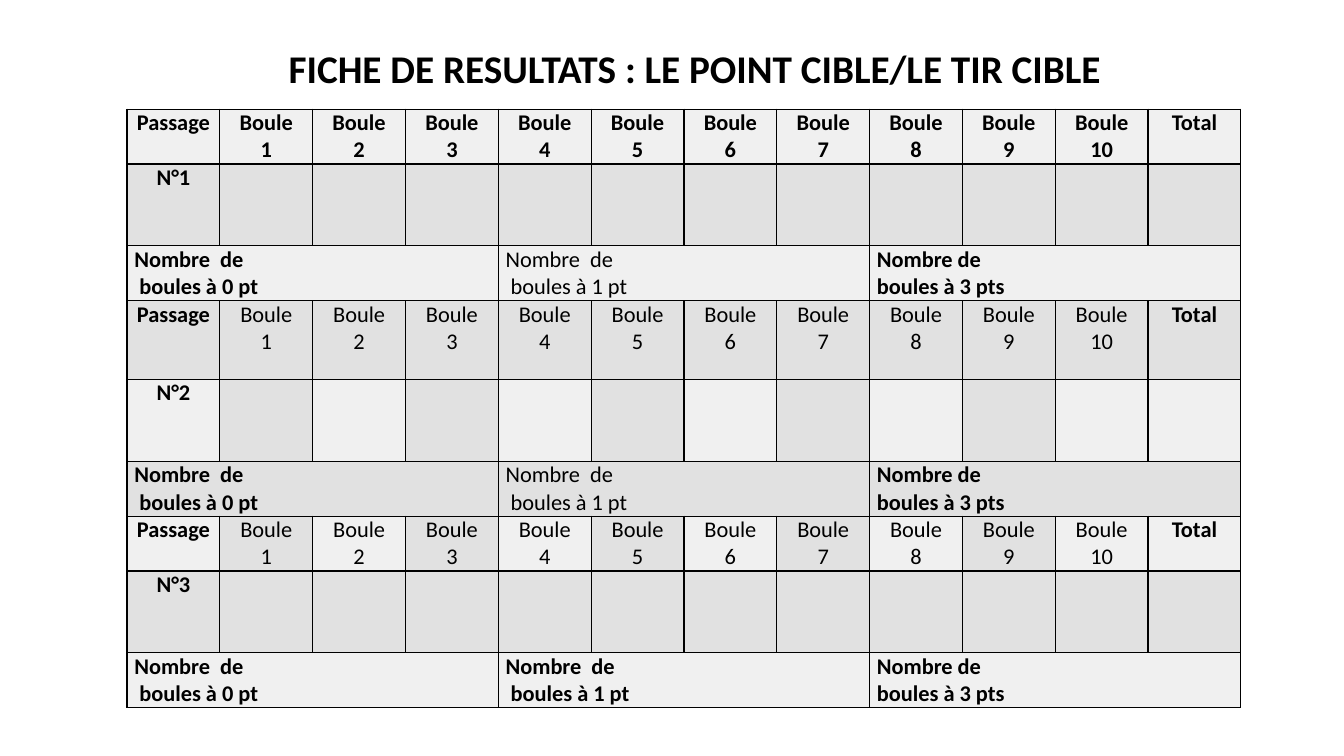
from dataclasses import dataclass

from lxml import etree
from pptx import Presentation
from pptx import util as u
from pptx.dml.color import RGBColor
from pptx.enum import text
from pptx.oxml.ns import qn

PX = 9525  # EMU per px, 96 px to the inch


@dataclass(frozen=True)
class Theme:
    font: str = "Calibri"
    title_pt: int = 28
    cell_pt: int = 16
    border_pt: int = 1
    ink: str = "000000"
    light: str = "F0F0F0"
    dark: str = "E1E1E1"


THEME = Theme()
BALLS = 10
COLS = BALLS + 2
TALLY_SPAN = 4
TALLIES = (
    ("Nombre  de", " boules à 0 pt"),
    ("Nombre  de", " boules à 1 pt"),
    ("Nombre de", "boules à 3 pts"),
)
# Heights of the header, score and tally rows of each round
ROUND_HEIGHTS = ((52, 78, 52), (75, 78, 52), (52, 78, 52))
CHECKERED_ROWS = (4, 6)


def write(tf, lines, size, bold=True, align=text.PP_ALIGN.CENTER):
    for i, line in enumerate(lines):
        p = tf.paragraphs[0] if i == 0 else tf.add_paragraph()
        p.text = line
        p.alignment = align
        p.font.name = THEME.font
        p.font.size = u.Pt(size)
        p.font.bold = bold
        p.font.color.rgb = RGBColor.from_string(THEME.ink)


def add_borders(cell):
    tc_pr = cell._tc.get_or_add_tcPr()
    for side in ("a:lnL", "a:lnR", "a:lnT", "a:lnB"):
        ln = etree.SubElement(tc_pr, qn(side), w=str(u.Pt(THEME.border_pt)))
        fill = etree.SubElement(ln, qn("a:solidFill"))
        etree.SubElement(fill, qn("a:srgbClr"), val=THEME.ink)


def cell_color(row, col):
    if row in CHECKERED_ROWS:
        is_dark = col % 2 == 1 and col < COLS - 1
    else:
        is_dark = row % 2 == 1
    return THEME.dark if is_dark else THEME.light


def style_cells(table):
    for row in range(len(table.rows)):
        for col in range(COLS):
            cell = table.cell(row, col)
            cell.margin_left = cell.margin_right = 7 * PX
            cell.margin_top = cell.margin_bottom = 0
            add_borders(cell)
            cell.fill.solid()
            cell.fill.fore_color.rgb = RGBColor.from_string(cell_color(row, col))


def fill_round(table, number):
    """Write the header, score and tally rows of one round, counted from 1."""
    header = 3 * (number - 1)
    score, tally = header + 1, header + 2
    size = THEME.cell_pt

    write(table.cell(header, 0).text_frame, ["Passage"], size)
    for ball in range(1, BALLS + 1):
        tf = table.cell(header, ball).text_frame
        write(tf, ["Boule", str(ball)], size, bold=number == 1)
    write(table.cell(header, COLS - 1).text_frame, ["Total"], size)

    write(table.cell(score, 0).text_frame, [f"N°{number}"], size)
    for col in range(1, COLS):
        write(table.cell(score, col).text_frame, [""], size)

    for i, lines in enumerate(TALLIES):
        first = i * TALLY_SPAN
        cell = table.cell(tally, first)
        cell.merge(table.cell(tally, first + TALLY_SPAN - 1))
        bold = i != 1 or number == len(ROUND_HEIGHTS)
        write(cell.text_frame, lines, size, bold, text.PP_ALIGN.LEFT)


def add_score_table(s, x, y, w):
    heights = [h for group in ROUND_HEIGHTS for h in group]
    frame = s.shapes.add_table(len(heights), COLS, x * PX, y * PX,
                               w * PX, sum(heights) * PX)
    table = frame.table
    for row, height in zip(table.rows, heights):
        row.height = height * PX
    for column in table.columns:
        column.width = w * PX // COLS
    style_cells(table)
    for number in range(1, len(ROUND_HEIGHTS) + 1):
        fill_round(table, number)


def add_title(s, x, y, w, h):
    tf = s.shapes.add_textbox(x * PX, y * PX, w * PX, h * PX).text_frame
    tf.word_wrap = True
    write(tf, ["FICHE DE RESULTATS : LE POINT CIBLE/LE TIR CIBLE"], THEME.title_pt)


def main():
    prs = Presentation()
    prs.slide_width, prs.slide_height = 1280 * PX, 720 * PX
    s = prs.slides.add_slide(prs.slide_layouts[6])
    add_score_table(s, 121, 104, 1061)
    add_title(s, 204, 37, 915, 55)
    prs.save("out.pptx")


if __name__ == "__main__":
    main()
